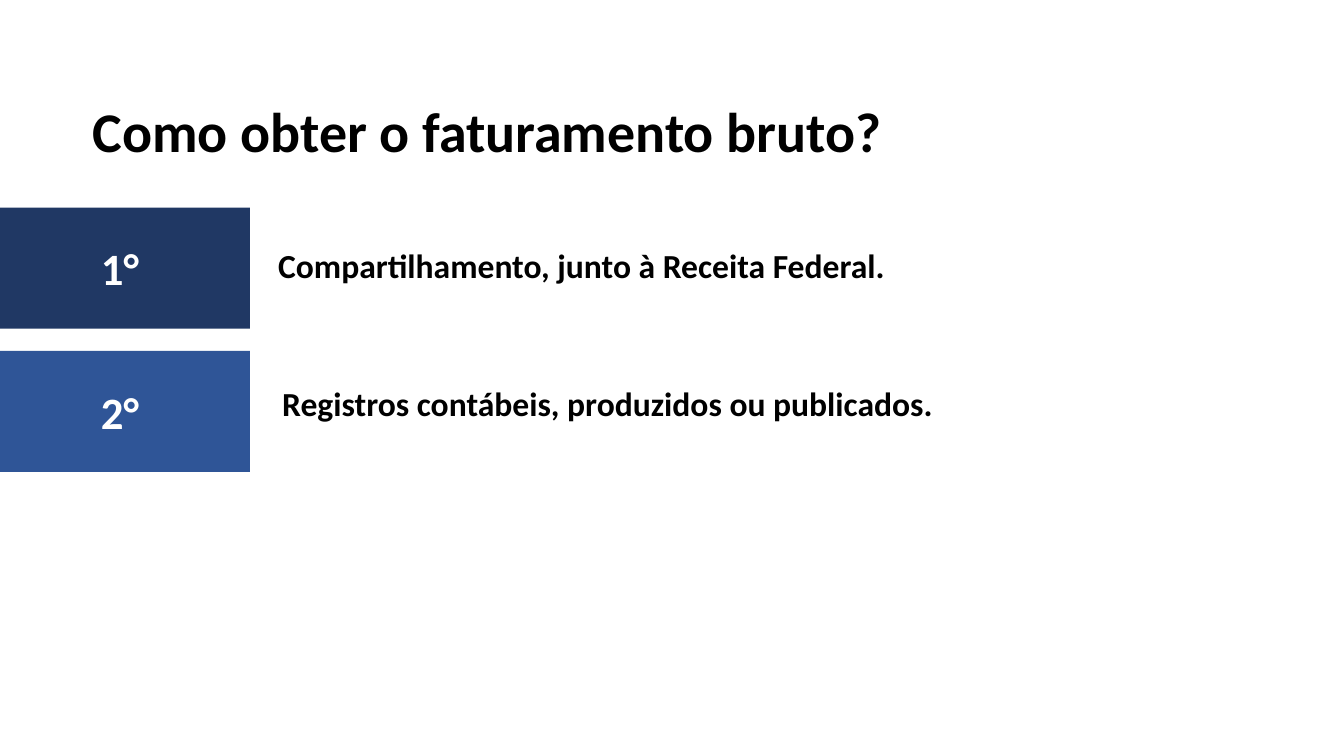
from pptx import Presentation
from pptx.dml.color import RGBColor
from pptx.enum.shapes import MSO_SHAPE as Shape
from pptx.enum.text import MSO_ANCHOR as Anchor, MSO_AUTO_SIZE as AutoSize, PP_ALIGN as Align
from pptx.util import Cm, Pt

COLORS = {"text": "000000", "light": "FFFFFF", "first": "203864", "second": "2F5597"}
TEXT_WIDTH, TEXT_HEIGHT = 26.67, 1.88
STEP_TOP, STEP_PITCH = 5.23, 3.61
STEPS = [
    ("1° ", "first", "Compartilhamento, junto à Receita Federal.", 6.76, 6.15),
    ("2° ", "second", "Registros contábeis, produzidos ou publicados.", 6.86, 9.63),
]


class SlideBuilder:
    """Holds the style and the current slide."""

    def __init__(self, deck):
        self.font = "Calibri"
        self.page = deck.slides.add_slide(deck.slide_layouts[5])

    def set_text(self, box, text, size, color="text", align=Align.LEFT, anchor=Anchor.TOP, spacing=0.9):
        """Put one bold run into a box."""
        frame = box.text_frame
        frame.word_wrap = True
        frame.auto_size = AutoSize.NONE
        frame.vertical_anchor = anchor
        para = frame.paragraphs[0]
        para.alignment = align
        para.line_spacing = spacing
        para.space_before = Pt(0)
        span = para.add_run()
        span.text = text
        span.font.name = self.font
        span.font.size = Pt(size)
        span.font.bold = True
        span.font.color.rgb = RGBColor.from_string(COLORS[color])

    def title(self, text, left, top):
        """Place and fill the title placeholder."""
        box = self.page.shapes.title
        box.left, box.top = Cm(left), Cm(top)
        box.width, box.height = Cm(TEXT_WIDTH), Cm(TEXT_HEIGHT)
        self.set_text(box, text, 40)

    def badge(self, text, top, fill):
        """Draw a numbered block at the left edge."""
        box = self.page.shapes.add_shape(Shape.RECTANGLE, Cm(0), Cm(top), Cm(6.3), Cm(3.05))
        box.shadow.inherit = False
        box.fill.solid()
        box.fill.fore_color.rgb = RGBColor.from_string(COLORS[fill])
        box.line.fill.background()
        self.set_text(box, text, 32, "light", Align.CENTER, Anchor.MIDDLE, 1.0)

    def label(self, text, left, top):
        """Add the sentence beside a block."""
        box = self.page.shapes.add_textbox(Cm(left), Cm(top), Cm(TEXT_WIDTH), Cm(TEXT_HEIGHT))
        self.set_text(box, text, 24)


def main():
    """Build and save the deck."""
    deck = Presentation()
    deck.slide_width, deck.slide_height = Cm(33.87), Cm(19.05)
    builder = SlideBuilder(deck)
    builder.title("Como obter o faturamento bruto?", 2.08, 2.49)
    for index, (number, fill, sentence, left, top) in enumerate(STEPS):
        builder.badge(number, STEP_TOP + index * STEP_PITCH, fill)
        builder.label(sentence, left, top)
    deck.save("out.pptx")


if __name__ == "__main__":
    main()
